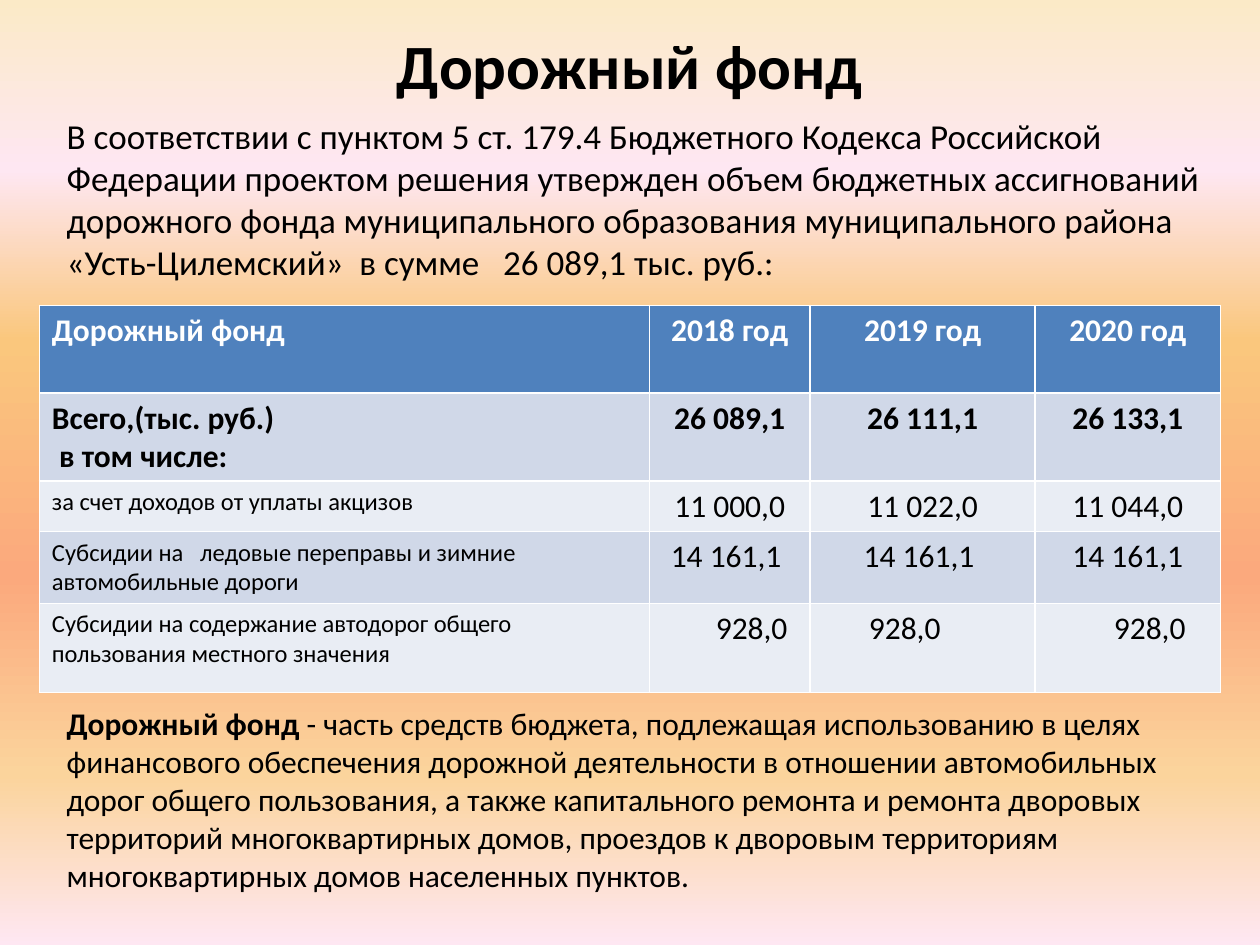
from pptx import Presentation
from pptx.dml.color import RGBColor
from pptx.enum import text
from pptx.oxml import parse_xml
from pptx.oxml.ns import nsdecls
from pptx.util import Pt

HUES = {"ink": "000000", "white": "FFFFFF", "head": "4F81BD",
        "dark": "D0D8E8", "light": "E9EDF4"}
STOPS = [(0, "FBEAC7"), (18, "FEE7F2"), (36, "FAC77D"),
         (61, "FBA97D"), (82, "FBD49C"), (100, "FEE7F2")]
ALIGN = text.PP_ALIGN


def style(frame, size, bold=False, hue="ink", align=ALIGN.LEFT):
    for para in frame.paragraphs:
        para.alignment = align
        for run in para.runs:
            font = run.font
            font.name, font.size, font.bold = "Calibri", Pt(size), bold
            font.color.rgb = RGBColor.from_string(HUES[hue])


def add_text(top, high, words, size):
    box = slide.shapes.add_textbox(Pt(31), Pt(top), Pt(670), Pt(high))
    frame = box.text_frame
    frame.word_wrap = True
    frame.text = words
    style(frame, size)
    return frame.paragraphs[0]


deck = Presentation()
deck.slide_width, deck.slide_height = Pt(720), Pt(540)
slide = deck.slides.add_slide(deck.slide_layouts[5])

# Background: vertical gradient
stops = "".join(f'<a:gs pos="{pos * 1000}"><a:srgbClr val="{hue}"/></a:gs>'
                for pos, hue in STOPS)
slide.background.fill.solid()
fill = slide.background._cSld.bg.bgPr
fill.replace(fill[0], parse_xml(
    f'<a:gradFill {nsdecls("a")} rotWithShape="1"><a:gsLst>{stops}</a:gsLst>'
    '<a:lin ang="5400000" scaled="0"/></a:gradFill>'))

# Title
title = slide.shapes.title
title.left, title.top, title.width, title.height = Pt(118), Pt(11.5), Pt(484), Pt(51)
title.text_frame.text = "Дорожный фонд"
title.text_frame.vertical_anchor = text.MSO_ANCHOR.MIDDLE
style(title.text_frame, 36, True, align=ALIGN.CENTER)

# Introduction
add_text(62, 104, "В соответствии с пунктом 5 ст. 179.4 Бюджетного Кодекса "
         "Российской Федерации проектом решения утвержден объем бюджетных "
         "ассигнований дорожного фонда муниципального образования "
         "муниципального района «Усть-Цилемский»  в сумме   "
         "26 089,1 тыс. руб.:", 20)

# Table of the fund by year
rows = [
    ("Дорожный фонд", "2018 год", "2019 год", "2020 год"),
    ("Всего,(тыс. руб.)\n в том числе:", "26 089,1", "26 111,1", "26 133,1"),
    ("за счет доходов от уплаты акцизов", "11 000,0", "11 022,0", "11 044,0"),
    ("Субсидии на   ледовые переправы и зимние автомобильные дороги",
     "14 161,1 ", "14 161,1 ", "14 161,1"),
    ("Субсидии на содержание автодорог общего пользования местного значения",
     "928,0", "928,0", "928,0"),
]
wide = [348.5, 92, 128.5, 106]
high = [50, 50, 28.5, 41, 51]
fills = ["head", "dark", "light", "dark", "light"]
table = slide.shapes.add_table(len(rows), len(wide), Pt(22.5), Pt(174.5),
                               Pt(sum(wide)), Pt(sum(high))).table
for col, size in zip(table.columns, wide):
    col.width = Pt(size)
for r, row in enumerate(rows):
    table.rows[r].height = Pt(high[r])
    for c, words in enumerate(row):
        cell = table.cell(r, c)
        cell.fill.solid()
        cell.fill.fore_color.rgb = RGBColor.from_string(HUES[fills[r]])
        cell.text_frame.text = words
        style(cell.text_frame, 14 if r > 1 and c == 0 else 18, r < 2,
              "white" if r == 0 else "ink",
              ALIGN.CENTER if c else ALIGN.LEFT)

# Last row: figures set off from the right edge
for c, gap in enumerate([13, 54, 20], 1):
    cell = table.cell(len(rows) - 1, c)
    cell.margin_right = Pt(gap)
    cell.text_frame.paragraphs[0].alignment = ALIGN.RIGHT

# Definition, with its term in bold
para = add_text(399, 116, "Дорожный фонд", 18)
run = para.add_run()
run.text = (" - часть средств бюджета, подлежащая использованию в целях "
            "финансового обеспечения дорожной деятельности в отношении "
            "автомобильных дорог общего пользования, а также капитального "
            "ремонта и ремонта дворовых территорий многоквартирных домов, "
            "проездов к дворовым территориям многоквартирных домов "
            "населенных пунктов.")
style(para._parent, 18)
para.runs[0].font.bold = True

deck.save("out.pptx")
